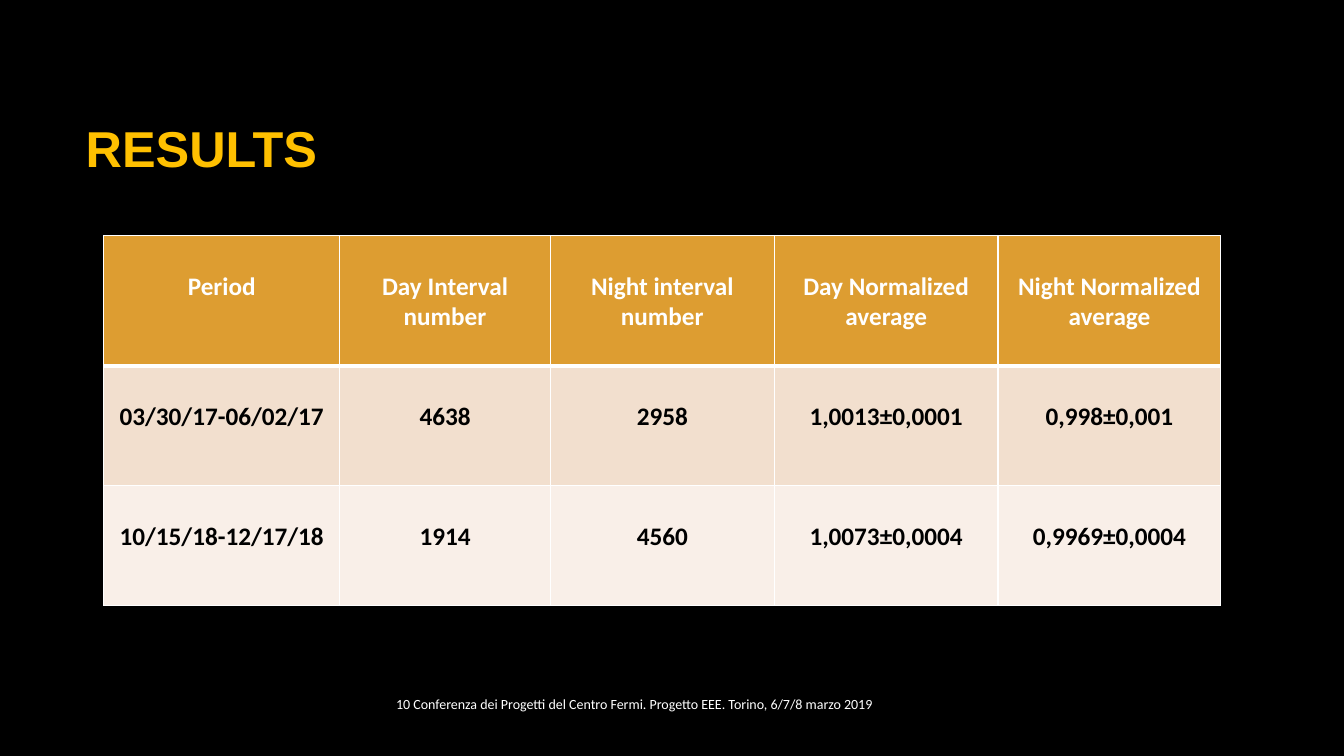
from dataclasses import dataclass

from lxml.etree import SubElement
from pptx import Presentation
from pptx.dml.color import RGBColor
from pptx.enum.text import MSO_ANCHOR, PP_ALIGN
from pptx.oxml.ns import qn
from pptx.util import Emu, Pt

BLACK = RGBColor(0x00, 0x00, 0x00)
WHITE = RGBColor(0xFF, 0xFF, 0xFF)
GOLD = RGBColor(0xFF, 0xC0, 0x00)
HEADER_FILL = RGBColor(0xDD, 0x9D, 0x31)
FIRST_FILL = RGBColor(0xF2, 0xDF, 0xCE)
SECOND_FILL = RGBColor(0xF9, 0xEF, 0xE8)

THIN, THICK = 1, 3  # border widths in points
CELL_TOP_MARGIN = 35
COLUMN_WIDTHS = (234, 209, 222, 222, 221)


@dataclass(frozen=True)
class ResultRow:
    texts: tuple[str, ...]
    height: int
    fill: RGBColor
    color: RGBColor
    top_border: int = THIN
    bottom_border: int = THIN


ROWS = (
    ResultRow(("Period", "Day Interval number", "Night interval number",
               "Day Normalized average", "Night Normalized average"),
              129, HEADER_FILL, WHITE, bottom_border=THICK),
    ResultRow(("03/30/17-06/02/17", "4638", "2958", "1,0013±0,0001", "0,998±0,001"),
              119, FIRST_FILL, BLACK, top_border=THICK),
    ResultRow(("10/15/18-12/17/18", "1914", "4560", "1,0073±0,0004", "0,9969±0,0004"),
              119, SECOND_FILL, BLACK),
)


def px(length: int) -> Emu:
    """Convert px to EMU at 100 px to the inch."""
    return Emu(length * 9144)


def add_text(paragraph, text: str, font_name: str, size: int,
             color: RGBColor, bold: bool, align: PP_ALIGN) -> None:
    paragraph.alignment = align
    run = paragraph.add_run()
    run.text = text
    run.font.name = font_name
    run.font.size = Pt(size)
    run.font.bold = bold
    run.font.color.rgb = color


def set_borders(cell, top: int, bottom: int) -> None:
    properties = cell._tc.get_or_add_tcPr()
    sides = (("a:lnL", THIN), ("a:lnR", THIN), ("a:lnT", top), ("a:lnB", bottom))
    for position, (tag, width) in enumerate(sides):
        line = SubElement(properties, qn(tag), w=str(Pt(width)))
        SubElement(SubElement(line, qn("a:solidFill")), qn("a:srgbClr"), val=str(WHITE))
        properties.insert(position, line)  # borders come before the fill


def add_title(slide) -> None:
    title = slide.shapes.title
    title.left, title.top, title.width, title.height = px(75), px(67), px(1108), px(159)
    title.text_frame.vertical_anchor = MSO_ANCHOR.MIDDLE
    add_text(title.text_frame.paragraphs[0], "RESULTS", "Arial", 36, GOLD, True, PP_ALIGN.LEFT)


def add_results(slide) -> None:
    results = slide.shapes.add_table(
        len(ROWS), len(COLUMN_WIDTHS), px(103), px(234),
        px(sum(COLUMN_WIDTHS)), px(sum(row.height for row in ROWS))).table
    for column, width in zip(results.columns, COLUMN_WIDTHS):
        column.width = px(width)
    for table_row, row in zip(results.rows, ROWS):
        table_row.height = px(row.height)
        for cell, text in zip(table_row.cells, row.texts):
            cell.margin_top = px(CELL_TOP_MARGIN)
            cell.fill.solid()
            cell.fill.fore_color.rgb = row.fill
            set_borders(cell, row.top_border, row.bottom_border)
            add_text(cell.text_frame.paragraphs[0], text, "Calibri", 18,
                     row.color, True, PP_ALIGN.CENTER)


def add_conference_line(slide) -> None:
    conference = slide.shapes.add_textbox(px(201), px(678), px(856), px(41)).text_frame
    conference.word_wrap = True
    conference.vertical_anchor = MSO_ANCHOR.MIDDLE
    add_text(conference.paragraphs[0],
             "10 Conferenza dei Progetti del Centro Fermi. Progetto EEE. Torino, 6/7/8 marzo 2019",
             "Calibri", 10, WHITE, False, PP_ALIGN.CENTER)


def main() -> None:
    presentation = Presentation()
    presentation.slide_width, presentation.slide_height = px(1333), px(750)
    slide = presentation.slides.add_slide(presentation.slide_layouts[5])

    # Background
    slide.background.fill.solid()
    slide.background.fill.fore_color.rgb = BLACK

    # Content
    add_title(slide)
    add_results(slide)
    add_conference_line(slide)
    presentation.save("out.pptx")


if __name__ == "__main__":
    main()
